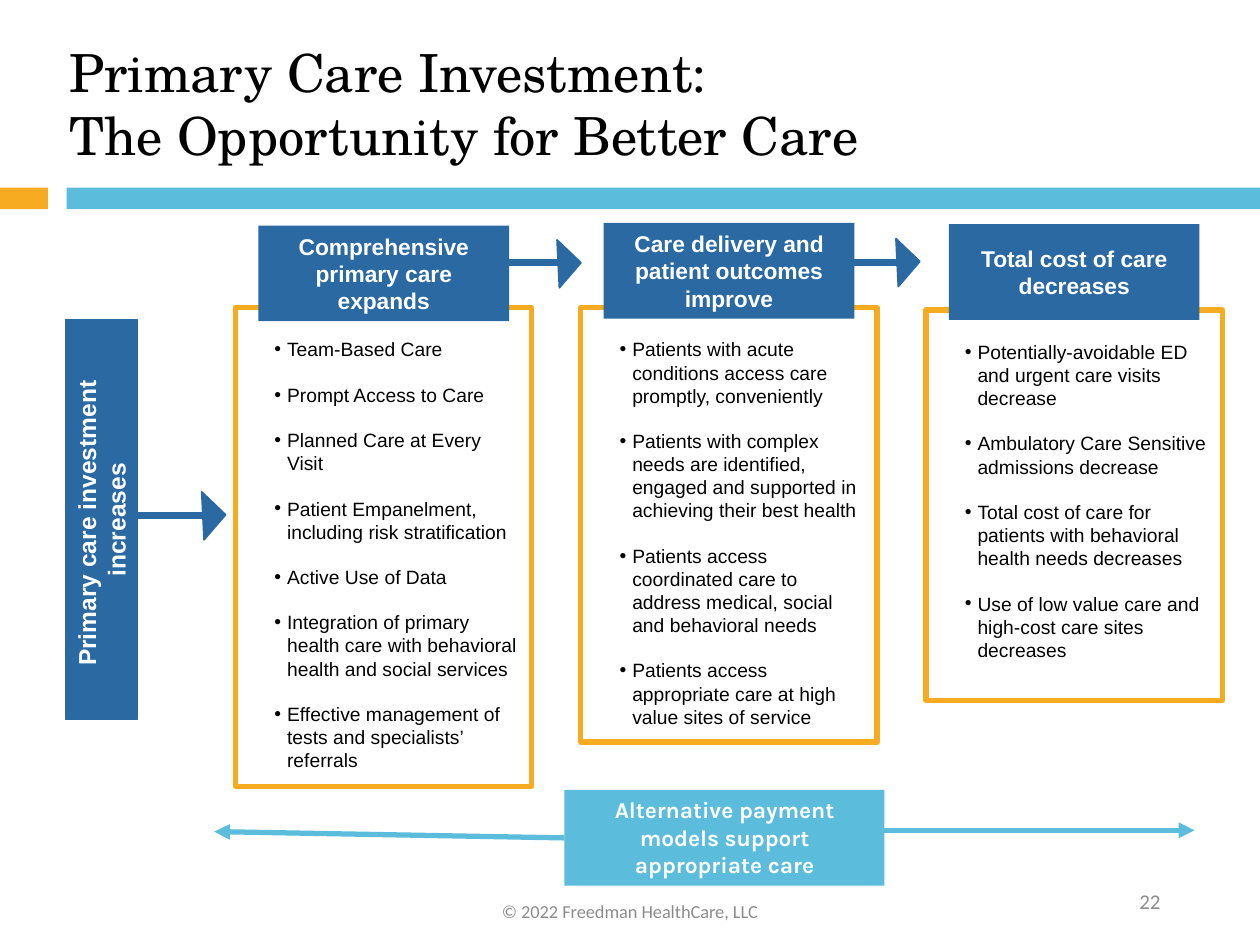
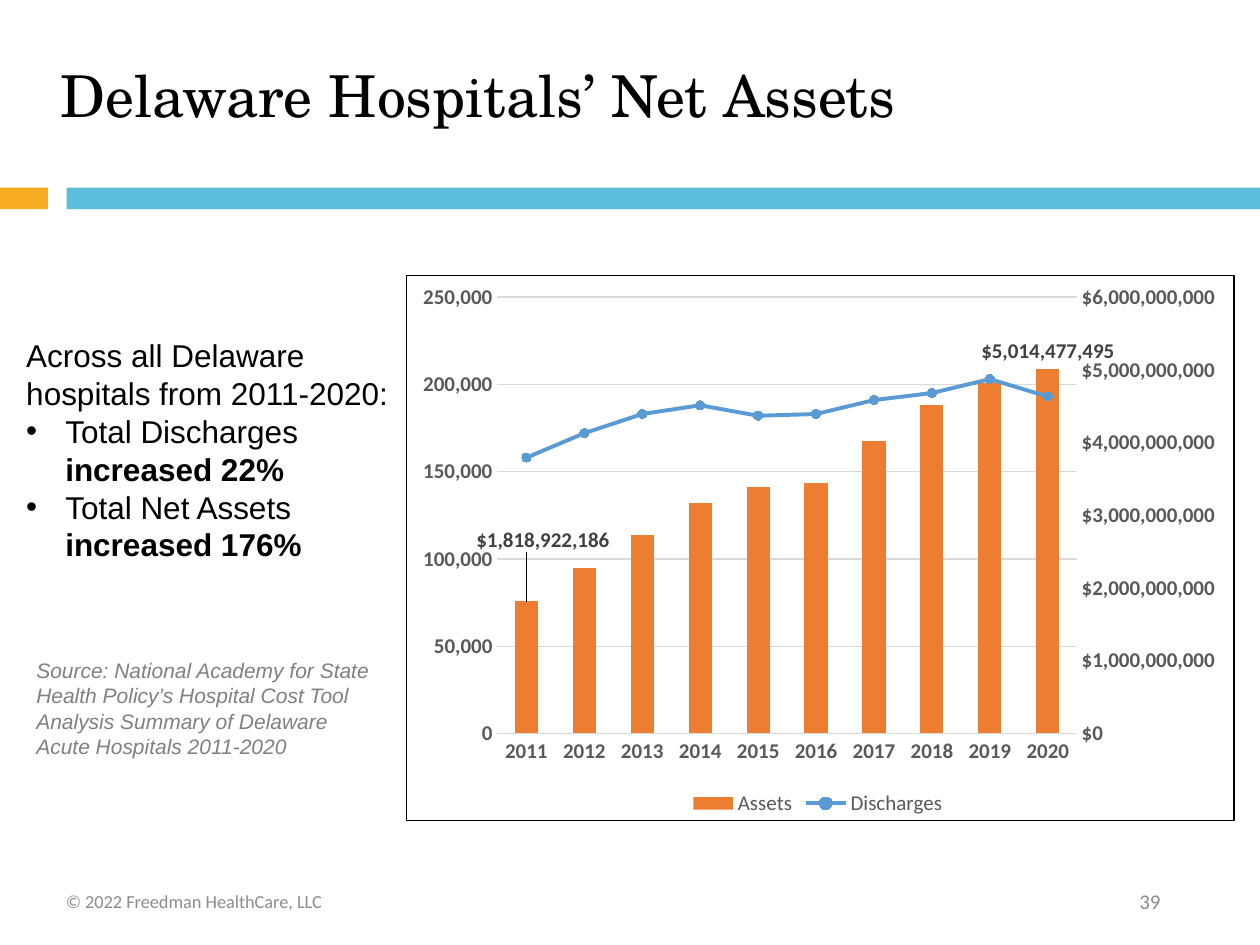
from copy import deepcopy

from lxml.etree import SubElement
from pptx import Presentation
from pptx.chart.data import CategoryChartData
from pptx.dml.color import RGBColor
from pptx.enum.chart import (XL_CHART_TYPE, XL_LABEL_POSITION, XL_LEGEND_POSITION,
                             XL_MARKER_STYLE, XL_TICK_MARK)
from pptx.enum.shapes import MSO_CONNECTOR, MSO_SHAPE
from pptx.enum.text import MSO_ANCHOR, MSO_AUTO_SIZE, PP_ALIGN
from pptx.oxml import parse_xml
from pptx.oxml.ns import nsdecls, qn
from pptx.util import Inches, Pt

BLACK = RGBColor(0x00, 0x00, 0x00)
WHITE = RGBColor(0xFF, 0xFF, 0xFF)
GOLD = RGBColor(0xF7, 0xAB, 0x21)
SKY = RGBColor(0x5B, 0xBD, 0xDB)
NAVY = RGBColor(0x2A, 0x69, 0xA2)
FOOTER_GRAY = RGBColor(0x8C, 0x8C, 0x8C)
SOURCE_GRAY = RGBColor(0x80, 0x80, 0x80)
AXIS_GRAY = RGBColor(0x59, 0x59, 0x59)
LABEL_GRAY = RGBColor(0x40, 0x40, 0x40)
GRID_GRAY = RGBColor(0xD9, 0xD9, 0xD9)
ORANGE = RGBColor(0xED, 0x7D, 0x31)
BLUE = RGBColor(0x5B, 0x9B, 0xD5)
COPYRIGHT = "© 2022 Freedman HealthCare, LLC"


def add_block(page, place, fill=None, line=None, width=1, kind=MSO_SHAPE.RECTANGLE):
    block = page.shapes.add_shape(kind, *[Inches(length) for length in place])
    block.shadow.inherit = False
    if fill is None:
        block.fill.background()
    else:
        block.fill.solid()
        block.fill.fore_color.rgb = fill
    if line is None:
        block.line.fill.background()
    else:
        block.line.color.rgb = line
        block.line.width = Pt(width)
    return block


def write(box, paragraphs, size, color, face="Arial", align=PP_ALIGN.LEFT,
          anchor=MSO_ANCHOR.TOP, italic=False, hang=0.0, gap=0):
    """Each paragraph is a list of (text, bold, bulleted) spans; a newline breaks the line."""
    frame = box.text_frame
    frame.word_wrap = True
    frame.auto_size = MSO_AUTO_SIZE.NONE
    frame.vertical_anchor = anchor
    for number, spans in enumerate(paragraphs):
        para = frame.add_paragraph() if number else frame.paragraphs[0]
        para.alignment = align
        if number and gap:
            para.space_before = Pt(gap)
        if spans[0][2]:
            props = para._p.get_or_add_pPr()
            props.set("marL", str(Inches(0.31)))
            props.set("indent", str(-Inches(hang)))
            SubElement(props, qn("a:buFont"), typeface="Arial")
            SubElement(props, qn("a:buChar"), char="•")
        for text, bold, _ in spans:
            for part_number, part in enumerate(text.split("\n")):
                if part_number:
                    para.add_line_break()
                span = para.add_run()
                span.text = part
                span.font.name = face
                span.font.size = Pt(size)
                span.font.bold = bold
                span.font.italic = italic
                span.font.color.rgb = color


deck = Presentation()
deck.slide_width, deck.slide_height = Inches(10), Inches(7.5)

# Title, band and footer of both pages
page_specs = [
    ("Primary Care Investment: \nThe Opportunity for Better Care", 30, (0.45, 0.28, 8.33, 1.08),
     MSO_ANCHOR.MIDDLE, 1.0, (3.31, 7.03, 3.38, 0.4), "22"),
    ("Delaware Hospitals’ Net Assets", 33, (0.38, 0.49, 8.23, 0.6),
     MSO_ANCHOR.TOP, 0.9, (0.38, 6.95, 2.32, 0.4), "39"),
]
pages = []
for title, size, title_place, anchor, spacing, footer_place, page_number in page_specs:
    page = deck.slides.add_slide(deck.slide_layouts[5])
    pages.append(page)
    heading = page.shapes.title
    heading.left, heading.top, heading.width, heading.height = map(Inches, title_place)
    write(heading, [[(title, False, False)]], size, BLACK, "TeX Gyre Schola", anchor=anchor)
    heading.text_frame.paragraphs[0].line_spacing = spacing
    add_block(page, (0, 1.49, 0.38, 0.17), GOLD)
    add_block(page, (0.53, 1.49, 9.47, 0.17), SKY)
    for text, place, text_size, align in [
            (COPYRIGHT, footer_place, 10.5, PP_ALIGN.CENTER),
            (page_number, (7.06, 6.95, 2.25, 0.4), 12, PP_ALIGN.RIGHT)]:
        box = page.shapes.add_textbox(*map(Inches, place))
        write(box, [[(text, False, False)]], text_size, FOOTER_GRAY, "Calibri", align,
              MSO_ANCHOR.MIDDLE)
flow_page, asset_page = pages

# Flow page: the starting point and the supporting payment models
investment = add_block(flow_page, (-0.78, 3.84, 3.17, 0.57), NAVY, NAVY, 0.75)
investment.rotation = 270
write(investment, [[("Primary care investment \nincreases", True, False)]], 14, WHITE,
      align=PP_ALIGN.CENTER)
payment = add_block(flow_page, (4.48, 6.27, 2.54, 0.76), SKY)
write(payment, [[("Alternative payment models support appropriate care", True, False)]],
      13, WHITE, "Karla", PP_ALIGN.CENTER)

# Flow page: connectors
for start_x, end_x, y, color, width, pointed in [
        (1.02, 1.69, 4.09, NAVY, 4, False), (3.8, 4.43, 2.08, NAVY, 4, False),
        (6.52, 7.27, 2.08, NAVY, 4, False), (4.48, 1.7, 6.6, SKY, 3, True),
        (6.42, 9.48, 6.59, SKY, 3, True)]:
    link = flow_page.shapes.add_connector(MSO_CONNECTOR.STRAIGHT, Inches(start_x), Inches(y),
                                          Inches(end_x), Inches(y))
    if end_x < start_x:
        link.begin_connect(payment, 1)
    link.line.color.rgb = color
    link.line.width = Pt(width)
    if pointed:
        SubElement(link.line._get_or_add_ln(), qn("a:tailEnd"), type="triangle")
    SubElement(link._element.spPr, qn("a:effectLst"))

# Flow page: large arrowheads
for left, top in [(1.51, 4), (4.33, 2), (7.02, 1.99)]:
    arrowhead = add_block(flow_page, (left, top, 0.38, 0.18), NAVY, NAVY,
                          kind=MSO_SHAPE.ISOSCELES_TRIANGLE)
    arrowhead.rotation = 87.2

# Flow page: three columns of outcomes
columns = [
    ("Comprehensive primary care expands", 1.79, 2.44, 3.8, [
        "Team-Based Care",
        "Prompt Access to Care",
        "Planned Care at Every Visit",
        "Patient Empanelment, including risk stratification",
        "Active Use of Data",
        "Integration of primary health care with behavioral health and social services",
        "Effective management of tests and specialists’ referrals"]),
    ("Care delivery and patient outcomes improve", 1.77, 2.44, 3.45, [
        "Patients with acute conditions access care promptly, conveniently",
        "Patients with complex needs are identified, engaged and supported in achieving "
        "their best health",
        "Patients access coordinated care to address medical, social and behavioral needs",
        "Patients access appropriate care at high value sites of service"]),
    ("Total cost of care\ndecreases", 1.78, 2.46, 3.1, [
        "Potentially-avoidable ED and urgent care visits decrease",
        "Ambulatory Care Sensitive admissions decrease",
        "Total cost of care for patients with behavioral health needs decreases",
        "Use of low value care and high-cost care sites decreases"]),
]
COLUMN_LEFT, COLUMN_STEP, COLUMN_WIDTH = 1.87, 2.74, 2.35
for index, (header_text, header_top, top, height, items) in enumerate(columns):
    left = COLUMN_LEFT + index * COLUMN_STEP
    panel = add_block(flow_page, (left, top, COLUMN_WIDTH, height), None, GOLD, 3)
    write(panel, [[(item, False, True)] for item in items], 11, BLACK, hang=0.1, gap=12.7)
    panel.text_frame.margin_top = Inches(0.24)
    header = add_block(flow_page, (left + 0.18, header_top, 1.99, 0.76), NAVY)
    write(header, [[(header_text, True, False)]], 13, WHITE, align=PP_ALIGN.CENTER,
          anchor=MSO_ANCHOR.MIDDLE)

# Asset page: findings and source
findings = asset_page.shapes.add_textbox(Inches(0.11), Inches(2.62), Inches(3.21), Inches(1.92))
write(findings, [
    [("Across all Delaware hospitals from 2011-2020:", False, False)],
    [("Total Discharges ", False, True), ("increased 22%", True, True)],
    [("Total Net Assets ", False, True), ("increased 176%", True, True)],
], 18, BLACK, hang=0.31)
source = asset_page.shapes.add_textbox(Inches(0.19), Inches(5.17), Inches(2.94), Inches(0.91))
write(source, [[("Source: National Academy for State Health Policy’s Hospital Cost Tool Analysis "
                 "Summary of Delaware Acute Hospitals 2011-2020", False, False)]],
      12, SOURCE_GRAY, italic=True)

# Asset page: chart data
data = CategoryChartData()
data.categories = [str(year) for year in range(2011, 2021)]
data.add_series("Assets", [1818922186, 2273000000, 2731000000, 3163000000, 3391000000,
                           3445000000, 4024000000, 4515000000, 4820000000, 5014477495],
                '"$"#,##0')
data.add_series("Discharges ", [158000, 172000, 183000, 188000, 182000,
                                183000, 191000, 195000, 203000, 193000], "#,##0")
chart = asset_page.shapes.add_chart(XL_CHART_TYPE.LINE_MARKERS, Inches(3.22), Inches(2.18),
                                    Inches(6.58), Inches(4.34), data).chart
chart.has_title = False
chart.font.name = "Calibri"
chart.font.size = Pt(10)
chart.font.color.rgb = BLACK
chart.has_legend = True
chart.legend.position = XL_LEGEND_POSITION.BOTTOM
chart.legend.include_in_layout = False
chart.legend.font.size = Pt(12)
chart.legend.font.color.rgb = AXIS_GRAY

# Asset page: axes for years and discharges
years, discharge_axis = chart.category_axis, chart.value_axis
for axis in (years, discharge_axis):
    axis.major_tick_mark = axis.minor_tick_mark = XL_TICK_MARK.NONE
    axis.tick_labels.font.size = Pt(12)
    axis.tick_labels.font.bold = True
    axis.tick_labels.font.color.rgb = AXIS_GRAY
years.format.line.color.rgb = GRID_GRAY
discharge_axis.format.line.fill.background()
discharge_axis.minimum_scale, discharge_axis.maximum_scale = 0, 250000
discharge_axis.major_unit = 50000
discharge_axis.tick_labels.number_format = "#,##0"
discharge_axis.tick_labels.number_format_is_linked = False
discharge_axis.has_major_gridlines = True
discharge_axis.major_gridlines.format.line.color.rgb = GRID_GRAY
discharge_axis.major_gridlines.format.line.width = Pt(0.75)

# Asset page: assets become columns on a second pair of axes
line_plot = chart._chartSpace.find(".//" + qn("c:lineChart"))
plot_area = line_plot.getparent()
bar_plot = parse_xml(
    f'<c:barChart {nsdecls("c")}><c:barDir val="col"/><c:grouping val="clustered"/>'
    '<c:varyColors val="0"/><c:axId val="5001"/><c:axId val="5002"/></c:barChart>')
line_plot.addprevious(bar_plot)
asset_series = line_plot.find(qn("c:ser"))
for tag in ("c:marker", "c:smooth"):
    for extra in asset_series.findall(qn(tag)):
        asset_series.remove(extra)
bar_plot.insert(3, asset_series)

year_element, value_element = plot_area.find(qn("c:catAx")), plot_area.find(qn("c:valAx"))
asset_values, asset_years = deepcopy(value_element), deepcopy(year_element)
value_element.addnext(asset_values)
asset_values.addnext(asset_years)
for element, own, other in [(asset_values, "5002", "5001"), (asset_years, "5001", "5002")]:
    element.find(qn("c:axId")).set("val", own)
    element.find(qn("c:crossAx")).set("val", other)
asset_years.find(qn("c:delete")).set("val", "1")
asset_values.remove(asset_values.find(qn("c:majorGridlines")))
asset_values.find(qn("c:axPos")).set("val", "r")
asset_values.find(qn("c:crosses")).set("val", "max")
asset_values.find(qn("c:numFmt")).set("formatCode", '"$"#,##0')
asset_values.find(qn("c:majorUnit")).set("val", "1000000000")
asset_values.find(qn("c:scaling")).find(qn("c:max")).set("val", "6000000000")

# Asset page: series colours and labels
bars, lines = chart.plots
bars.gap_width = 150
lines.vary_by_categories = False
assets, discharges = bars.series[0], lines.series[0]
assets.format.fill.solid()
assets.format.fill.fore_color.rgb = ORANGE
discharges.smooth = False
discharges.format.line.color.rgb = BLUE
discharges.format.line.width = Pt(2.25)
discharges.marker.style = XL_MARKER_STYLE.CIRCLE
discharges.marker.size = 5
discharges.marker.format.fill.solid()
discharges.marker.format.fill.fore_color.rgb = BLUE
discharges.marker.format.line.color.rgb = BLUE
assets.data_labels.show_value = False
for year_index in (0, 9):
    label = assets.points[year_index].data_label
    label.position = XL_LABEL_POSITION.OUTSIDE_END
    label.font.size = Pt(12)
    label.font.bold = True
    label.font.color.rgb = LABEL_GRAY
first_label = asset_series.find(".//" + qn("c:dLbl"))
first_label.insert(1, parse_xml(
    f'<c:layout {nsdecls("c")}><c:manualLayout><c:x val="0.02"/><c:y val="-0.08"/>'
    '</c:manualLayout></c:layout>'))

# Asset page: plot position and chart border
for layout in plot_area.findall(qn("c:layout")):
    plot_area.remove(layout)
plot_area.insert(0, parse_xml(
    f'<c:layout {nsdecls("c")}><c:manualLayout><c:layoutTarget val="inner"/>'
    '<c:xMode val="edge"/><c:yMode val="edge"/><c:x val="0.11"/><c:y val="0.04"/>'
    '<c:w val="0.7"/><c:h val="0.8"/></c:manualLayout></c:layout>'))
chart._chartSpace.find(qn("c:chart")).addnext(parse_xml(
    f'<c:spPr {nsdecls("c", "a")}><a:noFill/><a:ln w="{Pt(0.75)}"><a:solidFill>'
    f'<a:srgbClr val="{BLACK}"/></a:solidFill></a:ln></c:spPr>'))

deck.save("out.pptx")
